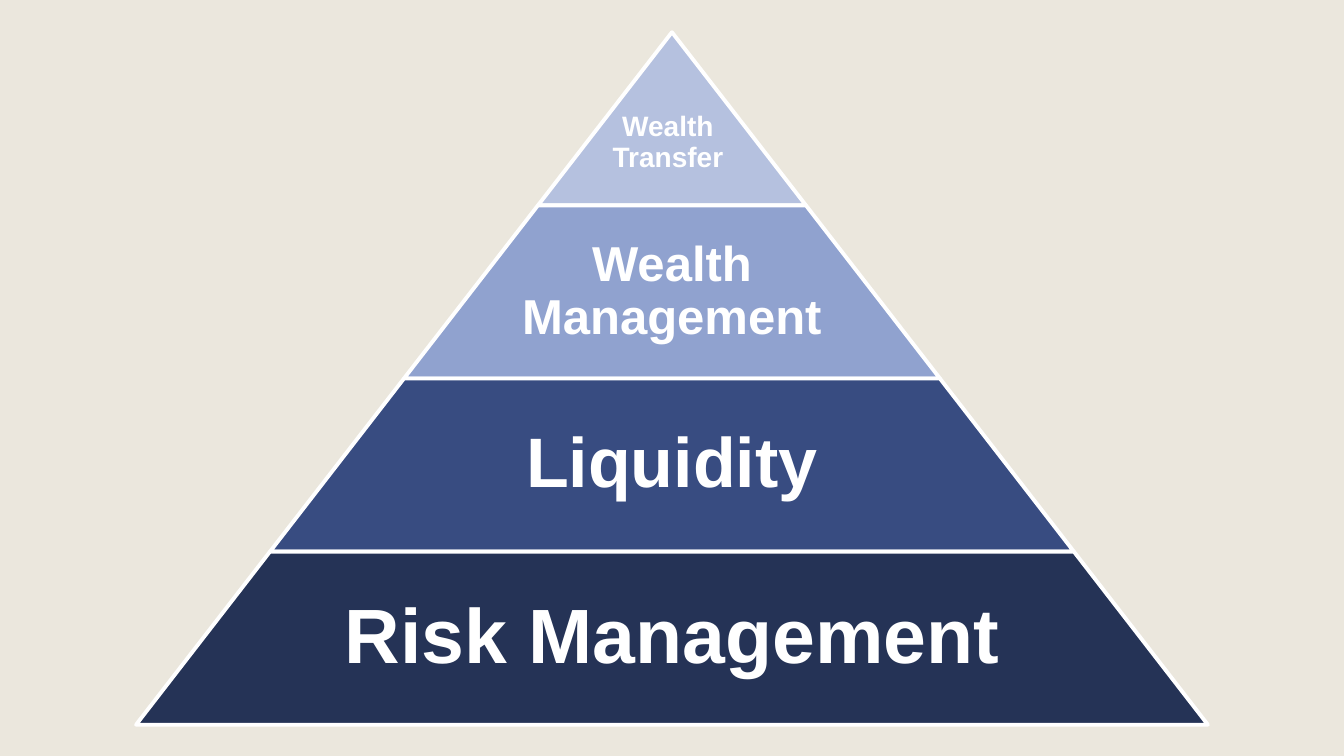
import pptx
import pptx.util
import pptx.dml.color
import pptx.enum.shapes
import pptx.enum.text

Inches = pptx.util.Inches
Pt = pptx.util.Pt

COLORS = {
    "page": "EBE7DD",
    "white": "FFFFFF",
    "pale": "B5C1DF",
    "light": "90A2CF",
    "mid": "384C81",
    "dark": "253356",
}

# Text, fill, font size, share of tier width, insets (left, top, right, bottom)
TIERS = [
    ("Wealth\vTransfer", "pale", 20, 1, (0.03, 0.51, 0.11, 0.03)),
    ("Wealth Management", "light", 35, 0.65, (0.05,) * 4),
    ("Liquidity", "mid", 50, 0.65, (0.07,) * 4),
    ("Risk Management", "dark", 55, 0.65, (0.08,) * 4),
]


def color(name):
    return pptx.dml.color.RGBColor.from_string(COLORS[name])


def add_band(shapes, box, fill, slant):
    """Draw one sloped band of the pyramid."""
    kind = pptx.enum.shapes.MSO_SHAPE.TRAPEZOID
    band = shapes.add_shape(kind, *map(Inches, box))
    band.adjustments[0] = slant
    band.shadow.inherit = False
    band.fill.solid()
    band.fill.fore_color.rgb = color(fill)
    band.line.color.rgb = color("white")
    band.line.width = Pt(2.75)


def add_label(shapes, box, text, size, pads):
    """Write a centred label in the given box."""
    frame = shapes.add_textbox(*map(Inches, box)).text_frame
    frame.word_wrap = True
    frame.vertical_anchor = pptx.enum.text.MSO_ANCHOR.MIDDLE
    (frame.margin_left, frame.margin_top,
     frame.margin_right, frame.margin_bottom) = map(Inches, pads)
    para = frame.paragraphs[0]
    para.text = text
    para.alignment = pptx.enum.text.PP_ALIGN.CENTER
    para.line_spacing = 0.9
    for run in para.runs:
        run.font.name = "Arial"
        run.font.size = Pt(size)
        run.font.bold = True
        run.font.color.rgb = color("white")


def add_pyramid(slide, left, top, width, height):
    """Stack the tiers, each wider than the last by the same step."""
    shapes = slide.shapes.add_group_shape().shapes
    step = width / len(TIERS)
    tall = height / len(TIERS)
    mid = left + width / 2
    for i, (text, fill, size, share, pads) in enumerate(TIERS):
        wide = step * (i + 1)
        y = top + i * tall
        add_band(shapes, (mid - wide / 2, y, wide, tall), fill,
                 step / 2 / tall)
        span = wide * share
        add_label(shapes, (mid - span / 2, y, span, tall), text, size, pads)


def main():
    deck = pptx.Presentation()
    deck.slide_width = Inches(13.33)
    deck.slide_height = Inches(7.5)
    slide = deck.slides.add_slide(deck.slide_layouts[6])

    # Page colour
    back = slide.background.fill
    back.solid()
    back.fore_color.rgb = color("page")

    # Pyramid
    add_pyramid(slide, 1.35, 0.32, 10.63, 6.87)
    deck.save("out.pptx")


if __name__ == "__main__":
    main()
